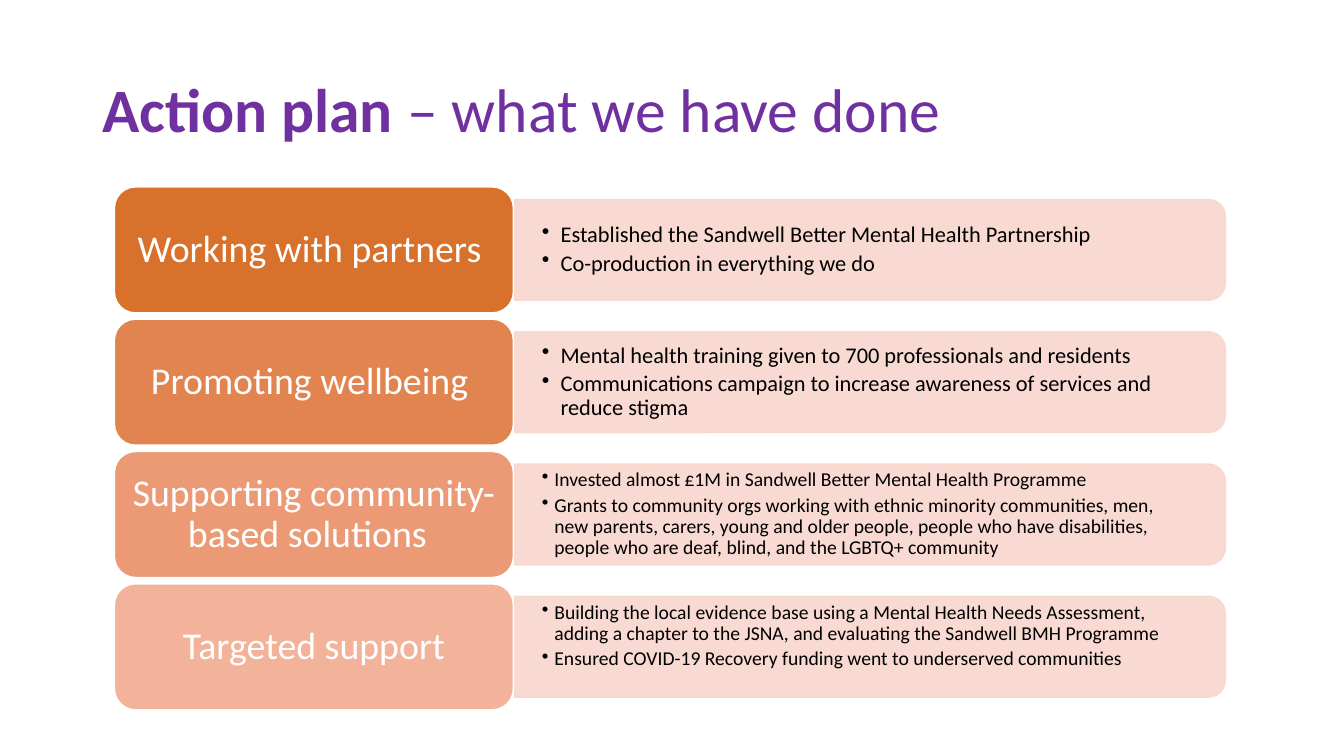
"""Build the action plan slide: four themes, each with what has been done."""
from lxml.etree import SubElement
from pptx import Presentation
from pptx.dml.color import RGBColor
from pptx.enum.shapes import MSO_SHAPE as Shape
from pptx.enum.text import MSO_ANCHOR as Anchor, PP_ALIGN as Align
from pptx.oxml.ns import qn
from pptx.util import Pt

PX = 9525
FONT = "Calibri"
PALE = "F8D7CE"
ROW_TOP, ROW_PITCH, ROW_HEIGHT = 178, 126, 120
LABEL_LEFT, LABEL_WIDTH = 109, 380
PANEL_LEFT, PANEL_WIDTH, PANEL_HEIGHT = 490, 677, 96
BULLETS_WIDTH, BULLETS_HEIGHT = 672, 88

THEMES = [
    ("Working with partners ", "D7712C", 16, 18, 13, [
        "Established the Sandwell Better Mental Health Partnership",
        "Co-production in everything we do"]),
    ("Promoting wellbeing ", "E28450", 16, 18, 13, [
        "Mental health training given to 700 professionals and residents",
        "Communications campaign to increase awareness of services and reduce stigma"]),
    ("Supporting community-based solutions \t", "EB9A75", 14, 12, 13, [
        "Invested almost £1M in Sandwell Better Mental Health Programme",
        "Grants to community orgs working with ethnic minority communities, men, "
        "new parents, carers, young and older people, people who have disabilities, "
        "people who are deaf, blind, and the LGBTQ+ community"]),
    ("Targeted support", "F3B39B", 14, 12, 33, [
        "Building the local evidence base using a Mental Health Needs Assessment, "
        "adding a chapter to the JSNA, and evaluating the Sandwell BMH Programme",
        "Ensured COVID-19 Recovery funding went to underserved communities"]),
]


def rgb(value):
    return RGBColor.from_string(value)


def add_run(paragraph, text, size, color, bold=False):
    paragraph.line_spacing = 0.9
    run = paragraph.add_run()
    run.text = text
    run.font.name = FONT
    run.font.size = Pt(size)
    run.font.bold = bold
    run.font.color.rgb = rgb(color)


deck = Presentation()
deck.slide_width, deck.slide_height = 1280 * PX, 720 * PX
slide = deck.slides.add_slide(deck.slide_layouts[6])
shapes = slide.shapes

title = shapes.add_textbox(88 * PX, 38 * PX, 1104 * PX, 139 * PX).text_frame
title.word_wrap = True
title.vertical_anchor = Anchor.MIDDLE
add_run(title.paragraphs[0], "Action plan ", 44, "7030A0", bold=True)
add_run(title.paragraphs[0], "– what we have done", 44, "7030A0")

for row, (theme, shade, size, indent, bottom, actions) in enumerate(THEMES):
    top = ROW_TOP + row * ROW_PITCH
    middle = top + ROW_HEIGHT // 2

    panel = shapes.add_shape(
        Shape.ROUND_2_SAME_RECTANGLE,
        (PANEL_LEFT * 2 + PANEL_WIDTH - PANEL_HEIGHT) * PX // 2,
        (middle * 2 - PANEL_WIDTH) * PX // 2,
        PANEL_HEIGHT * PX, PANEL_WIDTH * PX)
    panel.rotation = 90
    panel.shadow.inherit = False
    panel.line.width = Pt(1)
    for paint in (panel.fill, panel.line.fill):
        paint.solid()
        paint.fore_color.rgb = rgb(PALE)
    for tint in panel._element.spPr.iter(qn("a:srgbClr")):
        SubElement(tint, qn("a:alpha"), val="90000")

    bullets = shapes.add_textbox(
        PANEL_LEFT * PX, (middle - BULLETS_HEIGHT // 2) * PX,
        BULLETS_WIDTH * PX, BULLETS_HEIGHT * PX).text_frame
    bullets.word_wrap = True
    bullets.vertical_anchor = Anchor.MIDDLE
    bullets.margin_left = bullets.margin_right = 26 * PX
    bullets.margin_top, bullets.margin_bottom = 13 * PX, bottom * PX
    for index, action in enumerate(actions):
        item = bullets.add_paragraph() if index else bullets.paragraphs[0]
        properties = item._p.get_or_add_pPr()
        properties.set("marL", str(indent * PX))
        properties.set("indent", str(-indent * PX))
        SubElement(properties, qn("a:buChar"), char="•")
        item.level = 1
        item.space_after = Pt(3)
        add_run(item, action, size, "000000")

    label = shapes.add_shape(
        Shape.ROUNDED_RECTANGLE, LABEL_LEFT * PX, top * PX,
        LABEL_WIDTH * PX, ROW_HEIGHT * PX)
    label.shadow.inherit = False
    label.fill.solid()
    label.fill.fore_color.rgb = rgb(shade)
    label.line.color.rgb = rgb("FFFFFF")
    label.line.width = Pt(1)
    caption = label.text_frame
    caption.word_wrap = True
    caption.vertical_anchor = Anchor.MIDDLE
    caption.margin_left = caption.margin_right = 11 * PX
    caption.margin_top = caption.margin_bottom = 6 * PX
    caption.paragraphs[0].alignment = Align.CENTER
    add_run(caption.paragraphs[0], theme, 27, "FFFFFF")

deck.save("out.pptx")
